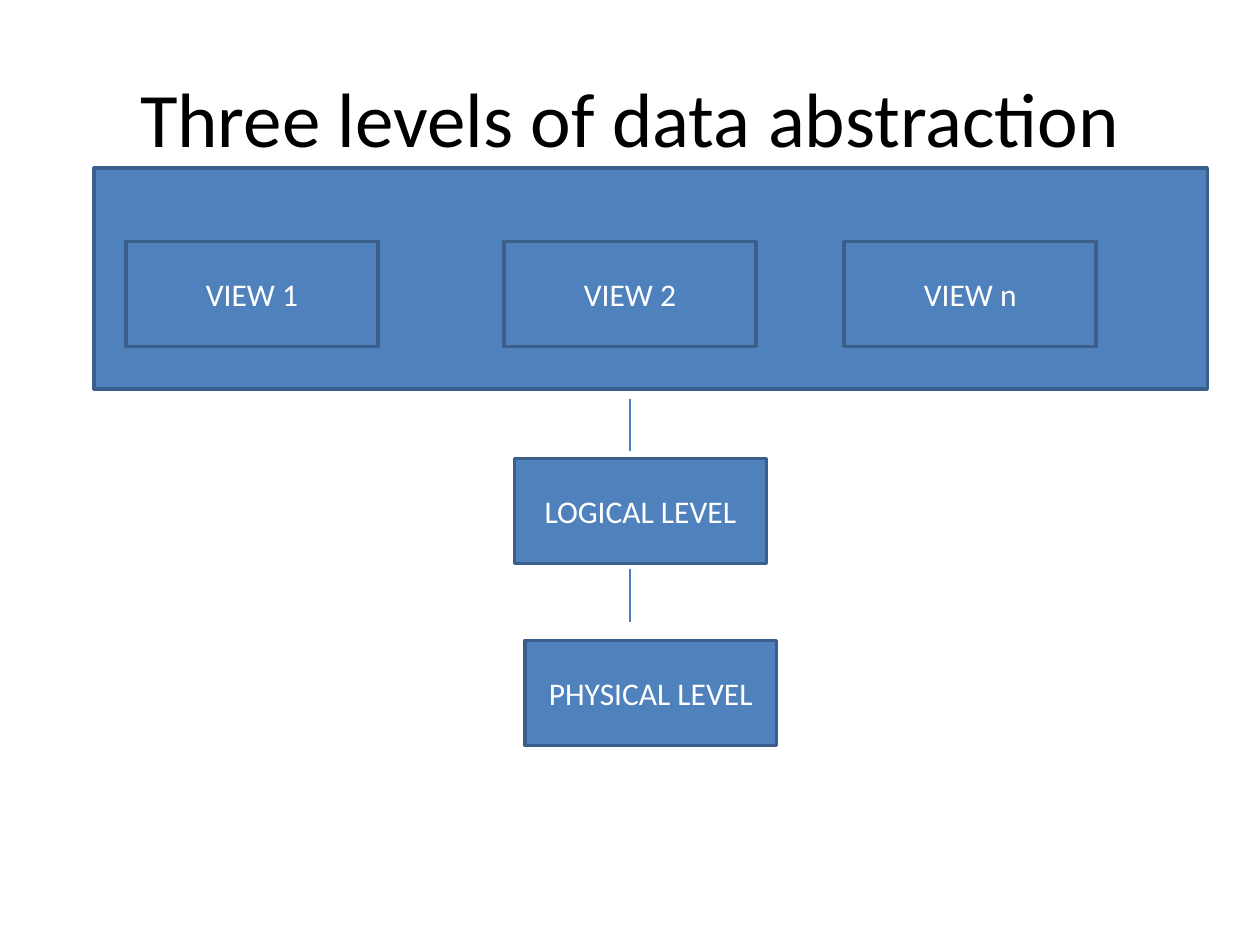
from pptx import Presentation
from pptx import util as u
from pptx.dml.color import RGBColor
from pptx.enum import shapes, text
from lxml import etree

BLUE = RGBColor(0x4F, 0x81, 0xBD)
EDGE = RGBColor(0x3A, 0x5F, 0x8C)
LINK = RGBColor(0x4B, 0x7E, 0xBC)
WHITE = RGBColor(0xFF, 0xFF, 0xFF)
BLACK = RGBColor(0, 0, 0)
A = "{http://schemas.openxmlformats.org/drawingml/2006/main}"


def write(sp, content, size=18, color=WHITE):
    tf = sp.text_frame
    tf.word_wrap = True
    tf.vertical_anchor = text.MSO_ANCHOR.MIDDLE
    p = tf.paragraphs[0]
    p.alignment = text.PP_ALIGN.CENTER
    r = p.add_run()
    r.text = content
    r.font.name = "Calibri"
    r.font.size = u.Pt(size)
    r.font.color.rgb = color


prs = Presentation()
prs.slide_width, prs.slide_height = u.Cm(25.4), u.Cm(19.05)
s = prs.slides.add_slide(prs.slide_layouts[6])

box_w, box_h, view_y = 5.08, 2.12, 4.87
boxes = [
    ("", 1.9, 3.39, 22.44, 4.45),
    ("VIEW 1", 2.54, view_y, box_w, box_h),
    ("VIEW 2", 10.16, view_y, box_w, box_h),
    ("VIEW n", 17.02, view_y, box_w, box_h),
    ("LOGICAL LEVEL", 10.37, 9.24, box_w, box_h),
    ("PHYSICAL LEVEL", 10.58, 12.91, box_w, box_h),
]
for label, *box in boxes:
    sp = s.shapes.add_shape(shapes.MSO_SHAPE.RECTANGLE, *map(u.Cm, box))
    sp.shadow.inherit = False
    sp.fill.solid()
    sp.fill.fore_color.rgb = BLUE
    sp.line.color.rgb = EDGE
    sp.line.width = u.Pt(2)
    if label:
        write(sp, label)

title = s.shapes.add_textbox(u.Cm(1.27), u.Cm(0.76), u.Cm(22.86), u.Cm(3.18))
write(title, "Three levels of data abstraction", size=44, color=BLACK)

for y in (8.05, 11.48):
    link = s.shapes.add_connector(
        shapes.MSO_CONNECTOR.STRAIGHT, u.Cm(12.7), u.Cm(y), u.Cm(12.7), u.Cm(y + 1.05))
    link.line.color.rgb = LINK
    link.line.width = u.Pt(0.75)
    etree.SubElement(link._element.spPr, A + "effectLst")

prs.save("out.pptx")
